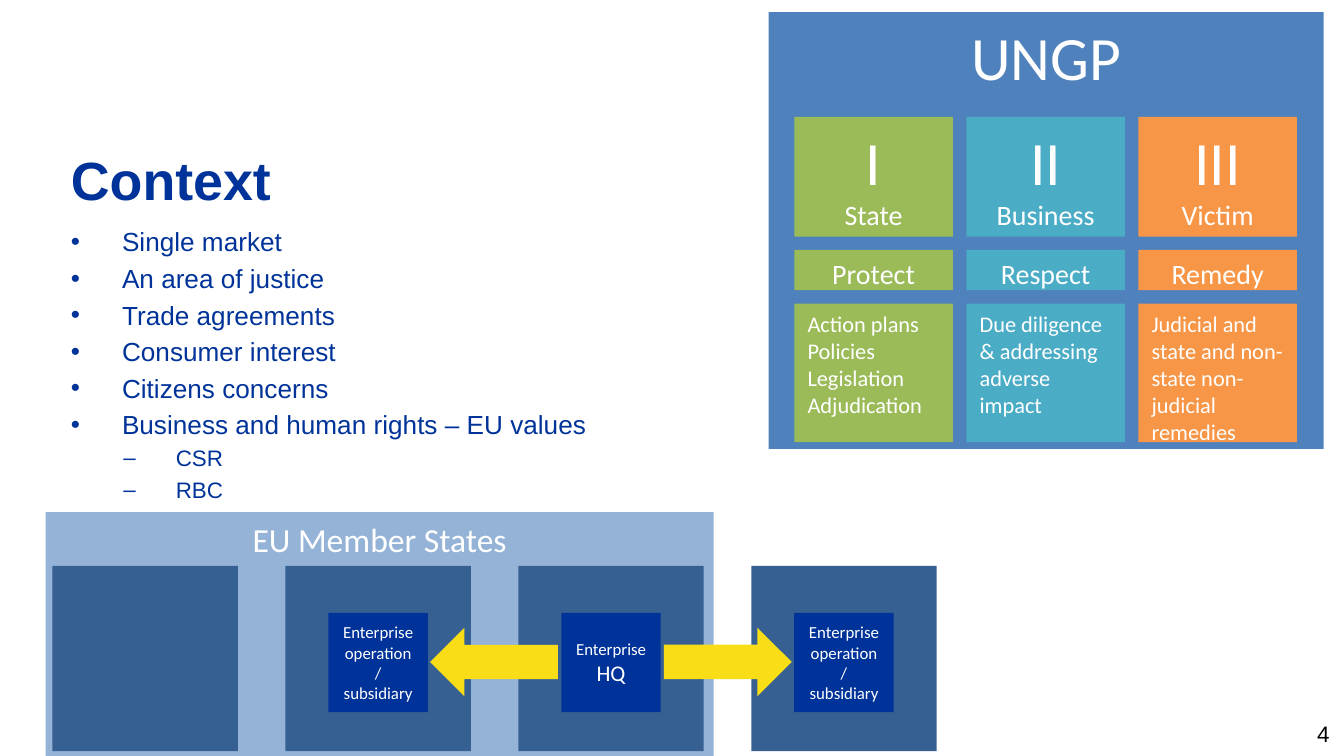
from lxml import etree
from pptx import Presentation
from pptx.dml.color import RGBColor
from pptx.enum.shapes import MSO_SHAPE
from pptx.enum.text import MSO_ANCHOR, PP_ALIGN
from pptx.oxml.ns import qn
from pptx.util import Inches, Pt

RECTANGLE, ARROW = MSO_SHAPE.RECTANGLE, MSO_SHAPE.RIGHT_ARROW
TOP, MIDDLE = MSO_ANCHOR.TOP, MSO_ANCHOR.MIDDLE
LEFT, CENTER, RIGHT = PP_ALIGN.LEFT, PP_ALIGN.CENTER, PP_ALIGN.RIGHT

SLIDE_WIDTH = 10
SLIDE_HEIGHT = SLIDE_WIDTH * 9 / 16

COLORS = {
    "navy": "003399", "black": "000000", "white": "FFFFFF",
    "panel": "4F81BD", "green": "9BBB59", "teal": "4BACC6", "orange": "F79646",
    "union": "95B3D7", "country": "376092", "arrow": "F9DD16",
}

# Each pillar: colour, numeral, actor, duty, means
PILLARS = [
    ("green", "I", "State", "Protect",
     ["Action plans", "Policies", "Legislation", "Adjudication"]),
    ("teal", "II", "Business", "Respect",
     ["Due diligence & addressing adverse impact"]),
    ("orange", "III", "Victim", "Remedy",
     ["Judicial and state and non-state non-judicial remedies"]),
]
PILLAR_LEFT, PILLAR_PITCH, PILLAR_WIDTH = 5.91, 1.28, 1.18
PILLAR_ROWS = [(0.87, 0.89), (1.86, 0.3), (2.26, 1.03)]

TOPICS = ["Single market", "An area of justice", "Trade agreements",
          "Consumer interest", "Citizens concerns",
          "Business and human rights – EU values"]
SUBTOPICS = ["CSR", "RBC"]
TOPIC_SIZE, SUBTOPIC_SIZE = 14, 12
SPACING_SHARE = 0.2

COUNTRY_LEFT, COUNTRY_TOP, COUNTRY_SIZE = 0.39, 4.21, 1.38
COUNTRY_PITCH = 5.2 / 3
ENTERPRISE_SIZE, ENTERPRISE_TOP = 0.74, 4.56
SUBSIDIARY = [("Enterprise operation / subsidiary", 9)]
HEADQUARTERS = [("Enterprise ", 9), ("HQ", 12)]


def color(name):
    return RGBColor.from_string(COLORS[name])


def write(shape, paragraphs, font="Calibri", ink="white", align=CENTER,
          anchor=TOP, bold=False):
    """Fill a shape with paragraphs, each a list of (text, size) runs."""
    text_frame = shape.text_frame
    text_frame.word_wrap = True
    text_frame.vertical_anchor = anchor
    for index, runs in enumerate(paragraphs):
        paragraph = text_frame.add_paragraph() if index else text_frame.paragraphs[0]
        paragraph.alignment = align
        for text, size in runs:
            run = paragraph.add_run()
            run.text = text
            run.font.name = font
            run.font.size = Pt(size)
            run.font.bold = bold
            run.font.color.rgb = color(ink)


def add_block(slide, box, fill, kind=RECTANGLE):
    shape = slide.shapes.add_shape(kind, *map(Inches, box))
    shape.shadow.inherit = False
    shape.fill.solid()
    shape.fill.fore_color.rgb = color(fill)
    shape.line.fill.background()
    return shape


def add_text(slide, box, paragraphs, **style):
    text_box = slide.shapes.add_textbox(*map(Inches, box))
    write(text_box, paragraphs, font="Arial", **style)
    return text_box


def set_bullet(paragraph, mark, margin, hang):
    properties = paragraph._p.get_or_add_pPr()
    properties.set("marL", str(Inches(margin)))
    properties.set("indent", str(-Inches(hang)))
    etree.SubElement(properties, qn("a:buFont")).set("typeface", "Arial")
    etree.SubElement(properties, qn("a:buChar")).set("char", mark)


def add_topics(slide):
    paragraphs = [[(topic, TOPIC_SIZE)] for topic in TOPICS]
    paragraphs += [[(subtopic, SUBTOPIC_SIZE)] for subtopic in SUBTOPICS]
    text_box = add_text(slide, (0.43, 1.63, 9.14, 3.39), paragraphs,
                        ink="navy", align=LEFT)
    for index, paragraph in enumerate(text_box.text_frame.paragraphs):
        is_topic = index < len(TOPICS)
        if index:
            size = TOPIC_SIZE if is_topic else SUBTOPIC_SIZE
            paragraph.space_before = Pt(SPACING_SHARE * size)
        if is_topic:
            set_bullet(paragraph, "•", 0.38, 0.38)
        else:
            paragraph.level = 1
            set_bullet(paragraph, "–", 0.78, 0.39)


def add_pillars(slide):
    panel = add_block(slide, (5.72, 0.09, 4.13, 3.25), "panel")
    write(panel, [[("UNGP", 33)]])
    for column, (fill, numeral, actor, duty, means) in enumerate(PILLARS):
        left = PILLAR_LEFT + column * PILLAR_PITCH
        head, middle, body = [
            add_block(slide, (left, top, PILLAR_WIDTH, height), fill)
            for top, height in PILLAR_ROWS]
        write(head, [[(numeral, 33)], [(actor, 15)]])
        write(middle, [[(duty, 15)]])
        write(body, [[(line, 12)] for line in means], align=LEFT)


def add_enterprise(slide, column, runs):
    inset = (COUNTRY_SIZE - ENTERPRISE_SIZE) / 2
    left = COUNTRY_LEFT + column * COUNTRY_PITCH + inset
    box = (left, ENTERPRISE_TOP, ENTERPRISE_SIZE, ENTERPRISE_SIZE)
    write(add_block(slide, box, "navy"), [runs], anchor=MIDDLE)


def add_member_states(slide):
    union = add_block(slide, (0.34, 3.81, 4.97, 1.82), "union")
    write(union, [[("EU Member States", 18)]])
    for column in range(4):
        left = COUNTRY_LEFT + column * COUNTRY_PITCH
        add_block(slide, (left, COUNTRY_TOP, COUNTRY_SIZE, COUNTRY_SIZE), "country")
    for column, runs in ((1, SUBSIDIARY), (2, HEADQUARTERS), (3, SUBSIDIARY)):
        add_enterprise(slide, column, runs)
    for left, rotation in ((3.2, 180), (4.94, 0)):
        arrow = add_block(slide, (left, 4.67, 0.95, 0.51), "arrow", ARROW)
        arrow.rotation = rotation


def main():
    presentation = Presentation()
    presentation.slide_width = Inches(SLIDE_WIDTH)
    presentation.slide_height = Inches(SLIDE_HEIGHT)
    slide = presentation.slides.add_slide(presentation.slide_layouts[6])
    add_text(slide, (8.07, 5.29, 1.92, 0.33), [[("4", 12)]],
             ink="black", align=RIGHT, anchor=MIDDLE)
    add_text(slide, (0.43, 1.04, 9.14, 0.53), [[("Context", 28.8)]],
             ink="navy", align=LEFT, bold=True)
    add_topics(slide)
    add_pillars(slide)
    add_member_states(slide)
    presentation.save("out.pptx")


if __name__ == "__main__":
    main()
